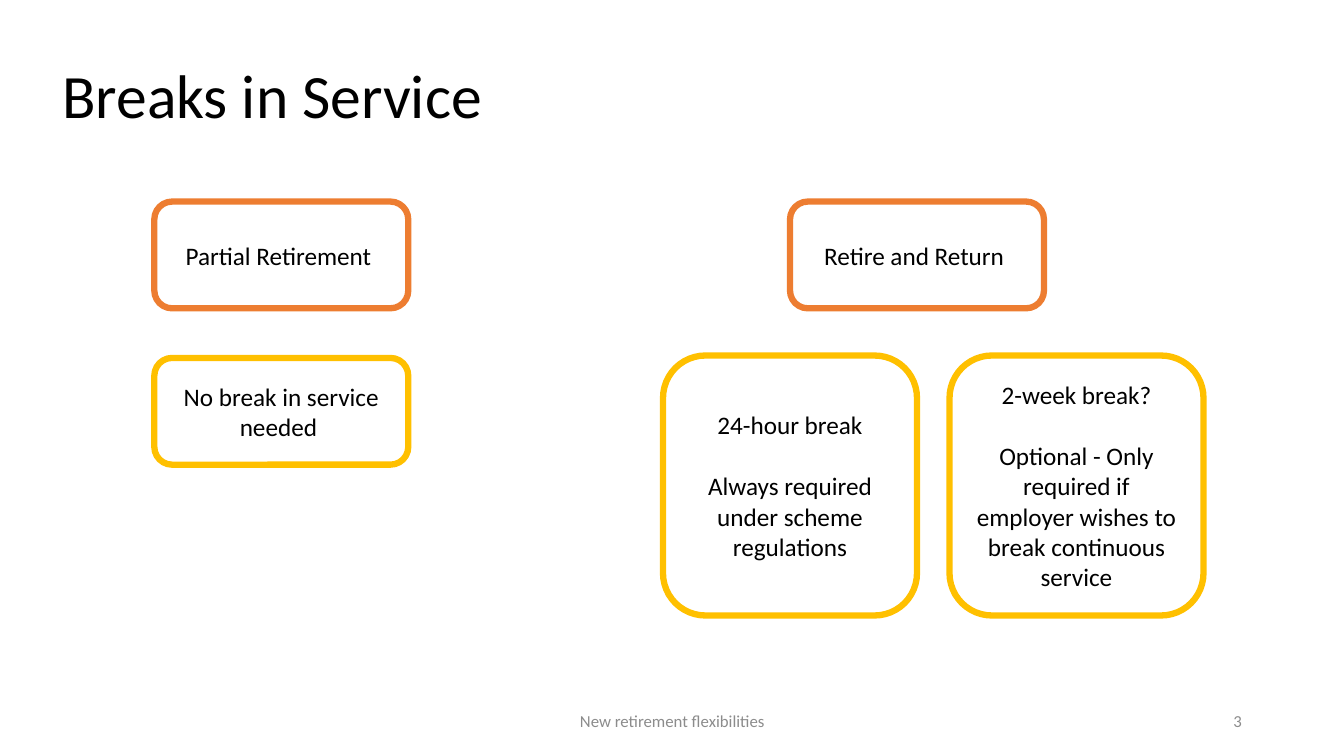
from dataclasses import dataclass

from pptx import Presentation
from pptx.dml.color import RGBColor
from pptx.enum.shapes import MSO_SHAPE
from pptx.enum.text import MSO_ANCHOR, PP_ALIGN
from pptx.util import Cm, Pt

ROUND_RECT = MSO_SHAPE.ROUNDED_RECTANGLE
MIDDLE = MSO_ANCHOR.MIDDLE
LEFT, CENTER, RIGHT = PP_ALIGN.LEFT, PP_ALIGN.CENTER, PP_ALIGN.RIGHT


@dataclass(frozen=True)
class Theme:
    font: str = "Calibri"
    text: str = "000000"
    muted: str = "8C8C8C"
    paper: str = "FFFFFF"
    option: str = "ED7D31"
    rule: str = "FFC000"
    title_size: float = 44
    body_size: float = 18
    footer_size: float = 12
    border: float = 4.5
    paragraph_gap: float = 22


THEME = Theme()
CARD_W, HEAD_H, CARD_GAP = 6.4, 2.69, 0.82


def rgb(value):
    return RGBColor.from_string(value)


def set_text(shape, *paragraphs, size=THEME.body_size, color=THEME.text,
             align=CENTER, line_spacing=1.0):
    tf = shape.text_frame
    tf.word_wrap = True
    tf.vertical_anchor = MIDDLE
    for i, text in enumerate(paragraphs):
        p = tf.paragraphs[0] if i == 0 else tf.add_paragraph()
        p.alignment = align
        p.line_spacing = line_spacing
        if i:
            p.space_before = Pt(THEME.paragraph_gap)
        r = p.add_run()
        r.text = text
        r.font.name = THEME.font
        r.font.size = Pt(size)
        r.font.color.rgb = rgb(color)


def add_text(s, box, text, **fmt):
    set_text(s.shapes.add_textbox(*map(Cm, box)), text, **fmt)


def add_card(s, box, border, *paragraphs):
    sp = s.shapes.add_shape(ROUND_RECT, *map(Cm, box))
    sp.shadow.inherit = False
    sp.fill.solid()
    sp.fill.fore_color.rgb = rgb(THEME.paper)
    sp.line.color.rgb = rgb(border)
    sp.line.width = Pt(THEME.border)
    set_text(sp, *paragraphs)


def add_option(s, box, heading, cards, card_h, heading_dx=0):
    """Place a heading at the top of the box and a row of cards at its foot."""
    left, top, _, height = box
    add_card(s, (left + heading_dx, top, CARD_W, HEAD_H), THEME.option, heading)
    for i, paragraphs in enumerate(cards):
        x = left + i * (CARD_W + CARD_GAP)
        add_card(s, (x, top + height - card_h, CARD_W, card_h), THEME.rule, *paragraphs)


def add_footer(s, box, text, number):
    left, top, width, height = box
    fmt = dict(size=THEME.footer_size, color=THEME.muted)
    add_text(s, (left, top, 11.43, height), text, align=CENTER, **fmt)
    add_text(s, (left + width - 7.62, top, 7.62, height), number, align=RIGHT, **fmt)


def main():
    prs = Presentation()
    prs.slide_width, prs.slide_height = Cm(33.87), Cm(19.05)
    s = prs.slides.add_slide(prs.slide_layouts[6])

    add_text(s, (1.32, 1.04, 31.19, 2.87), "Breaks in Service",
             size=THEME.title_size, align=LEFT, line_spacing=0.9)
    add_option(s, (3.89, 5.08, CARD_W, 6.63), "Partial Retirement ",
               [["No break in service needed "]], card_h=HEAD_H)
    add_option(s, (16.71, 5.08, 2 * CARD_W + CARD_GAP, 10.43), "Retire and Return ",
               [["24-hour break", "Always required under scheme regulations"],
                ["2-week break?", "Optional - Only required if employer wishes "
                                  "to break continuous service"]],
               card_h=6.55, heading_dx=3.2)
    add_footer(s, (11.23, 17.65, 20.32, 1.02), "New retirement flexibilities", "3")

    prs.save("out.pptx")


if __name__ == "__main__":
    main()
